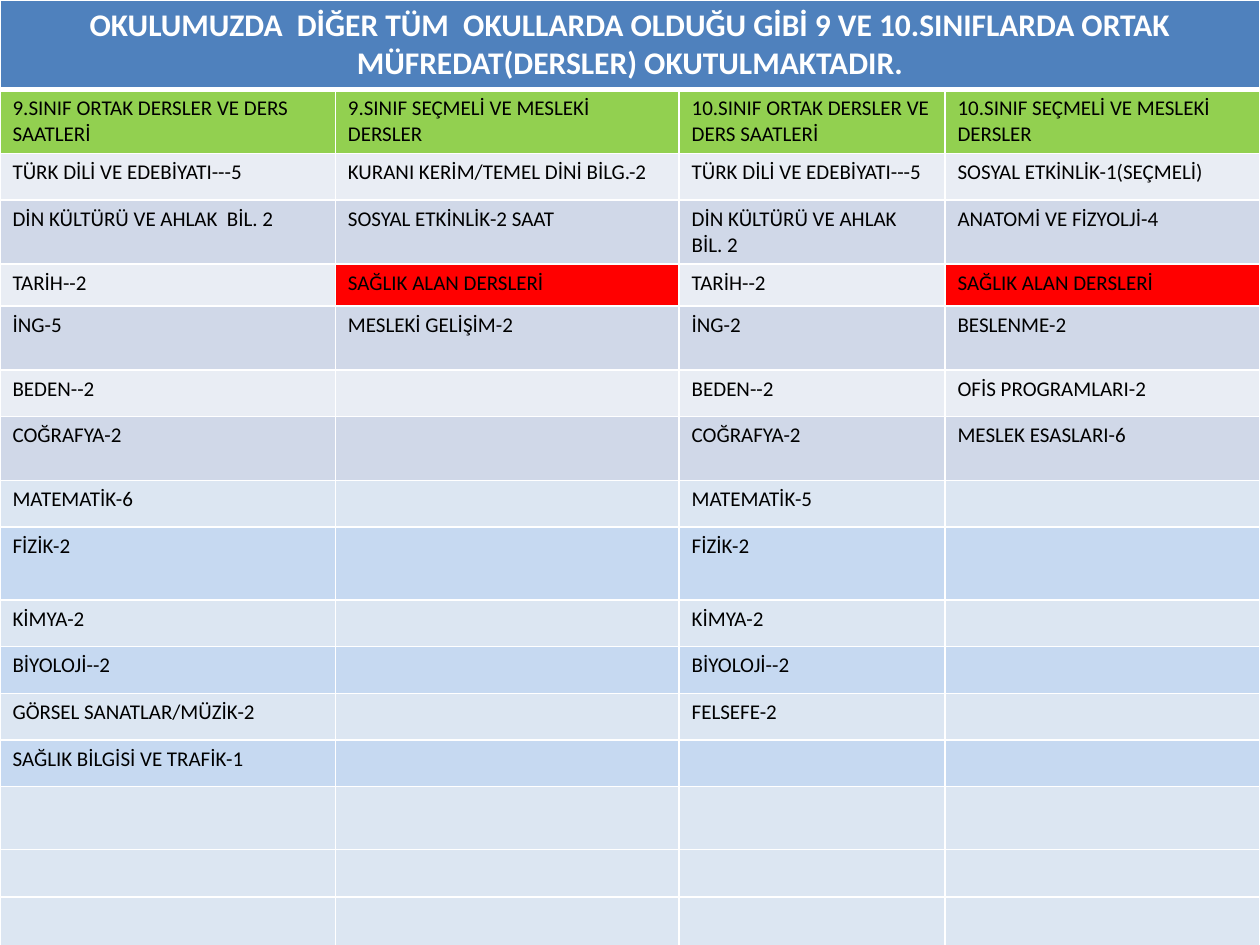
import lxml.etree
import pptx
import pptx.dml.color
import pptx.enum.text
import pptx.oxml.ns
import pptx.util

Cm = pptx.util.Cm
Pt = pptx.util.Pt

THEME = {
    "font": "Calibri",
    "title_size": 18,
    "body_size": 12,
    "title_text": "FFFFFF",
    "body_text": "000000",
    "title": "4F81BD",
    "header": "92D050",
    "grey": "E9EDF4",
    "slate": "D0D8E8",
    "pale": "DCE6F2",
    "blue": "C6D9F1",
    "field": "FF0000",
    "border": "FFFFFF",
    "thin": 1,
    "thick": 3,
}

TITLE = ("OKULUMUZDA  DİĞER TÜM  OKULLARDA OLDUĞU GİBİ 9 VE 10.SINIFLARDA ORTAK "
         "MÜFREDAT(DERSLER) OKUTULMAKTADIR.")
FIELD_HEADING = "SAĞLIK ALAN DERSLERİ"
COLUMN_WIDTHS = (6.76, 6.93, 5.36, 6.35)

# Row height in cm, fill, text of each column
ROWS = [
    (1.8, "title", (TITLE, "", "", "")),
    (1.29, "header", ("9.SINIF ORTAK DERSLER VE DERS SAATLERİ",
                      "9.SINIF SEÇMELİ VE MESLEKİ DERSLER",
                      "10.SINIF ORTAK DERSLER VE DERS SAATLERİ",
                      "10.SINIF SEÇMELİ VE MESLEKİ DERSLER")),
    (0.94, "grey", ("TÜRK DİLİ VE EDEBİYATI---5", "KURANI KERİM/TEMEL DİNİ BİLG.-2",
                    "TÜRK DİLİ VE EDEBİYATI---5", "SOSYAL ETKİNLİK-1(SEÇMELİ)")),
    (1.29, "slate", ("DİN KÜLTÜRÜ VE AHLAK  BİL. 2", "SOSYAL ETKİNLİK-2 SAAT",
                     "DİN KÜLTÜRÜ VE AHLAK  BİL. 2", "ANATOMİ VE FİZYOLJİ-4")),
    (0.84, "grey", ("TARİH--2", FIELD_HEADING, "TARİH--2", FIELD_HEADING)),
    (1.29, "slate", ("İNG-5", "MESLEKİ GELİŞİM-2", "İNG-2", "BESLENME-2")),
    (0.94, "grey", ("BEDEN--2", "", "BEDEN--2", "OFİS PROGRAMLARI-2")),
    (1.29, "slate", ("COĞRAFYA-2", "", "COĞRAFYA-2", "MESLEK ESASLARI-6")),
    (0.94, "pale", ("MATEMATİK-6", "", "MATEMATİK-5", "")),
    (1.47, "blue", ("FİZİK-2", "", "FİZİK-2", "")),
    (0.94, "pale", ("KİMYA-2", "", "KİMYA-2", "")),
    (0.94, "blue", ("BİYOLOJİ--2", "", "BİYOLOJİ--2", "")),
    (0.94, "pale", ("GÖRSEL SANATLAR/MÜZİK-2", "", "FELSEFE-2", "")),
    (0.94, "blue", ("SAĞLIK BİLGİSİ VE TRAFİK-1", "", "", "")),
    (1.27, "pale", ("", "", "", "")),
    (0.96, "pale", ("", "", "", "")),
    (1.78, "pale", ("", "", "", "")),
]


def color(name):
    return pptx.dml.color.RGBColor.from_string(THEME[name])


def set_borders(cell, top, bottom):
    """Draw all four sides; top and bottom name a line width of the theme."""
    properties = cell._tc.get_or_add_tcPr()
    qn = pptx.oxml.ns.qn
    for side, width in (("L", "thin"), ("R", "thin"), ("T", top), ("B", bottom)):
        line = lxml.etree.SubElement(properties, qn(f"a:ln{side}"), w=str(Pt(THEME[width])))
        fill = lxml.etree.SubElement(line, qn("a:solidFill"))
        lxml.etree.SubElement(fill, qn("a:srgbClr"), val=THEME["border"])


def write_cell(cell, text, is_title):
    kind = "title" if is_title else "body"
    size = THEME[f"{kind}_size"]
    para = cell.text_frame.paragraphs[0]
    if is_title:
        para.alignment = pptx.enum.text.PP_ALIGN.CENTER
    if not text:
        # The end mark keeps an empty cell from growing to the default type size
        para._p.get_or_add_endParaRPr().set("sz", str(size * 100))
        return
    span = para.add_run()
    span.text = text
    span.font.name = THEME["font"]
    span.font.size = Pt(size)
    span.font.bold = is_title
    span.font.color.rgb = color(f"{kind}_text")


def add_curriculum_table(page):
    frame = page.shapes.add_table(len(ROWS), len(COLUMN_WIDTHS), 0, 0,
                                  Cm(sum(COLUMN_WIDTHS)), Cm(sum(row[0] for row in ROWS)))
    table = frame.table
    for column, width in zip(table.columns, COLUMN_WIDTHS):
        column.width = Cm(width)
    for row_index, (height, fill, texts) in enumerate(ROWS):
        table.rows[row_index].height = Cm(height)
        for column_index, text in enumerate(texts):
            cell = table.cell(row_index, column_index)
            set_borders(cell, top="thick" if row_index == 1 else "thin",
                        bottom="thick" if row_index == 0 else "thin")
            cell.fill.solid()
            cell.fill.fore_color.rgb = color("field" if text == FIELD_HEADING else fill)
            write_cell(cell, text, is_title=row_index == 0)
    table.cell(0, 0).merge(table.cell(0, len(COLUMN_WIDTHS) - 1))


def main():
    deck = pptx.Presentation()
    deck.slide_width, deck.slide_height = Cm(25.4), Cm(19.05)
    page = deck.slides.add_slide(deck.slide_layouts[6])
    add_curriculum_table(page)
    deck.save("out.pptx")


if __name__ == "__main__":
    main()
